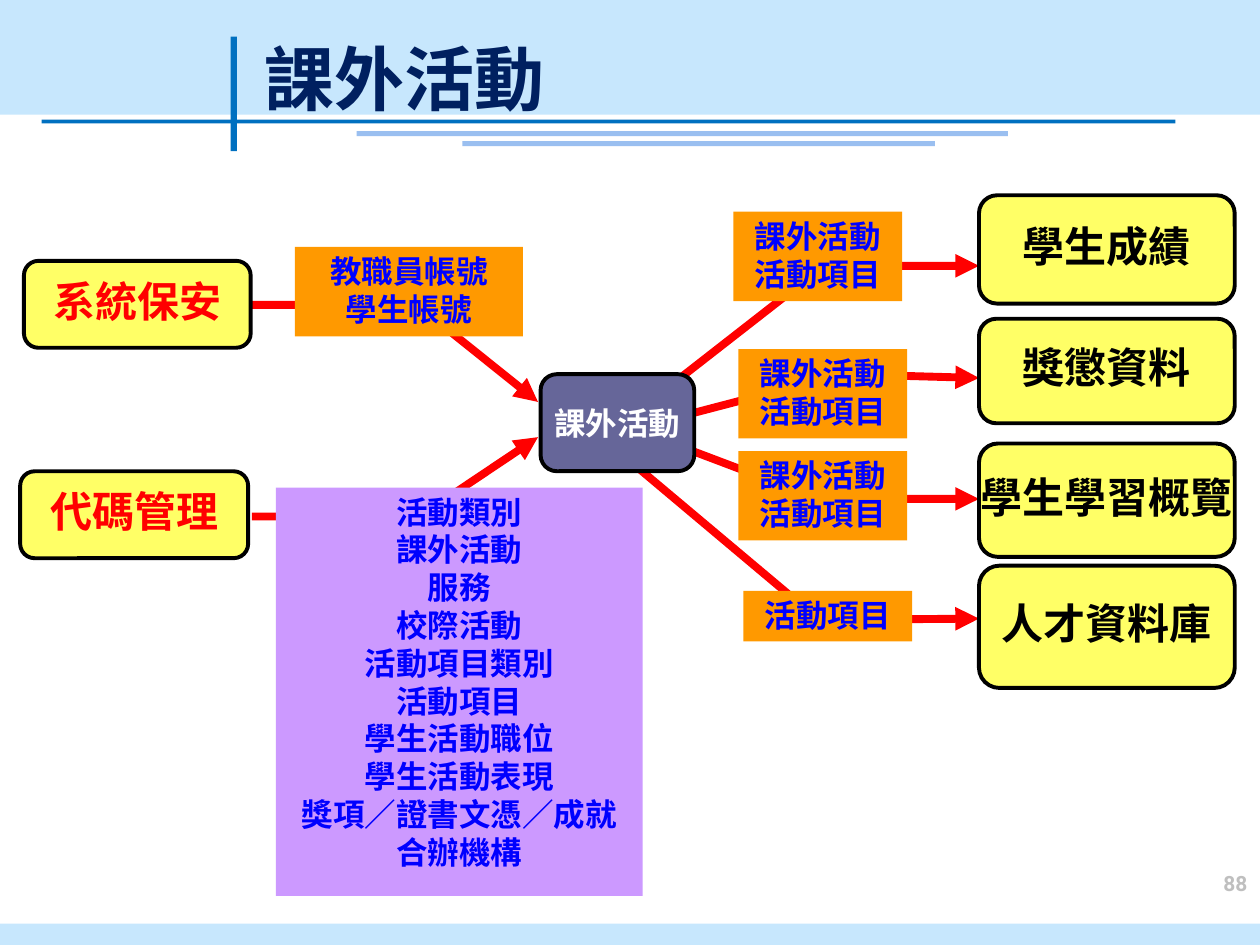
import pptx
import pptx.dml.color
import pptx.enum.shapes
import pptx.enum.text
import pptx.oxml
import pptx.oxml.ns
import pptx.util

RECTANGLE = pptx.enum.shapes.MSO_SHAPE.RECTANGLE
ROUNDED = pptx.enum.shapes.MSO_SHAPE.ROUNDED_RECTANGLE
ALIGN = pptx.enum.text.PP_ALIGN
ANCHOR = pptx.enum.text.MSO_ANCHOR
CJK_FONT = "Noto Sans CJK SC"

presentation = pptx.Presentation()
presentation.slide_width = pptx.util.Inches(10)
presentation.slide_height = pptx.util.Inches(7.5)
slide = presentation.slides.add_slide(presentation.slide_layouts[6])

# Grid of 10 columns by 7.5 rows
column = presentation.slide_width / 10
row = presentation.slide_height / 7.5


def paint(color_format, color):
    color_format.rgb = pptx.dml.color.RGBColor.from_string(color)


def add_box(kind, place, fill=None, lines=(), size=18, color="0000FF",
            font=CJK_FONT, align=ALIGN.CENTER, anchor=ANCHOR.TOP,
            insets=(0.07, 0.04), spacing=1.0):
    left, top, width, height = place
    shape = slide.shapes.add_shape(kind, int(left * column), int(top * row),
                                   int(width * column), int(height * row))
    shape.shadow.inherit = False
    if fill:
        shape.fill.solid()
        paint(shape.fill.fore_color, fill)
    else:
        shape.fill.background()
    if kind == ROUNDED:
        paint(shape.line.color, "000000")
        shape.line.width = pptx.util.Pt(2.25)
    else:
        shape.line.fill.background()

    frame = shape.text_frame
    frame.word_wrap = kind == RECTANGLE
    frame.vertical_anchor = anchor
    frame.margin_left = frame.margin_right = int(insets[0] * column)
    frame.margin_top = frame.margin_bottom = int(insets[1] * row)
    for index, line in enumerate(lines):
        paragraph = frame.paragraphs[0] if index == 0 else frame.add_paragraph()
        paragraph.text = line
        paragraph.alignment = align
        paragraph.line_spacing = spacing
        paragraph.font.name = font
        paragraph.font.size = pptx.util.Pt(size)
        paragraph.font.bold = True
        paint(paragraph.font.color, color)
        # East Asian typeface
        properties = paragraph.font._element
        east_asian = pptx.oxml.parse_xml(
            f'<a:ea {pptx.oxml.ns.nsdecls("a")} typeface="{font}"/>')
        properties.append(east_asian)


# Bands and rules of the slide frame
for place, fill in [
    ((0, 0, 10, 0.91), "C7E7FD"),
    ((0, 7.33, 10, 0.17), "C7E7FD"),
    ((1.83, 0.29, 0.05, 0.91), "0070C0"),
    ((0.33, 0.95, 9, 0.03), "0070C0"),
    ((2.83, 1.04, 5.17, 0.04), "9ABFF0"),
    ((3.67, 1.12, 3.75, 0.04), "9ABFF0"),
]:
    add_box(RECTANGLE, place, fill)

# Title and page number
add_box(RECTANGLE, (2, 0.17, 7.83, 0.83), lines=["課外活動"], size=40,
        color="002060", align=ALIGN.LEFT, anchor=ANCHOR.BOTTOM,
        insets=(0.1, 0.05))
add_box(RECTANGLE, (8.31, 6.86, 1.69, 0.5), lines=["88"], size=12,
        color="BFBFBF", font="Roboto", align=ALIGN.RIGHT, insets=(0.1, 0.05))

# Bent arrows, each from its source to its target
for start, bend, end in [
    ((2, 4.1), (3.33, 4.1), (4.27, 3.47)),
    ((1.97, 2.42), (3.31, 2.42), (4.27, 3.19)),
    ((5.36, 3.03), (6.54, 2.11), (7.77, 2.11)),
    ((5.38, 3.31), (6.68, 2.97), (7.77, 3)),
    ((5.1, 3.43), (6.5, 3.96), (7.77, 3.96)),
    ((5.06, 3.71), (6.5, 4.92), (7.77, 4.91)),
]:
    points = [(int(x * column), int(y * row)) for x, y in (start, bend, end)]
    builder = slide.shapes.build_freeform(*points[0])
    builder.add_line_segments(points[1:], close=False)
    arrow = builder.convert_to_shape()
    arrow.shadow.inherit = False
    arrow.fill.background()
    paint(arrow.line.color, "FF0000")
    arrow.line.width = pptx.util.Pt(4.5)
    arrow.line._get_or_add_ln().append(pptx.oxml.parse_xml(
        f'<a:tailEnd {pptx.oxml.ns.nsdecls("a")} type="triangle"/>'))

# Source modules on the left, target modules on the right
for place, name, color in [
    ((0.19, 2.07, 1.8, 0.69), "系統保安", "FF0000"),
    ((0.16, 3.74, 1.81, 0.69), "代碼管理", "FF0000"),
    ((7.77, 1.55, 2.03, 0.86), "學生成績", "000000"),
    ((7.77, 2.53, 2.03, 0.83), "獎懲資料", "000000"),
    ((7.77, 3.52, 2.03, 0.9), "學生學習概覽", "000000"),
    ((7.77, 4.49, 2.03, 0.97), "人才資料庫", "000000"),
]:
    add_box(ROUNDED, place, "FFFF66", [name], size=24, color=color,
            anchor=ANCHOR.MIDDLE, spacing=0.85)

# Data carried along the arrows
activity_data = ["課外活動", "活動項目"]
for place, fill, lines in [
    ((2.34, 1.96, 1.81, 0.71), "FF9900", ["教職員帳號", "學生帳號"]),
    ((5.82, 1.68, 1.34, 0.71), "FF9900", activity_data),
    ((5.86, 2.77, 1.34, 0.71), "FF9900", activity_data),
    ((5.86, 3.58, 1.34, 0.71), "FF9900", activity_data),
    ((5.9, 4.69, 1.34, 0.4), "FF9900", ["活動項目"]),
    ((2.19, 3.87, 2.91, 3.24), "CC99FF", [
        "活動類別", "課外活動", "服務", "校際活動", "活動項目類別",
        "活動項目", "學生活動職位", "學生活動表現",
        "獎項／證書文憑／成就", "合辦機構"]),
]:
    add_box(RECTANGLE, place, fill, lines)

# Central module
add_box(ROUNDED, (4.29, 2.97, 1.22, 0.77), "666699", ["課外活動"],
        color="FFFFFF", anchor=ANCHOR.MIDDLE)

presentation.save("out.pptx")
